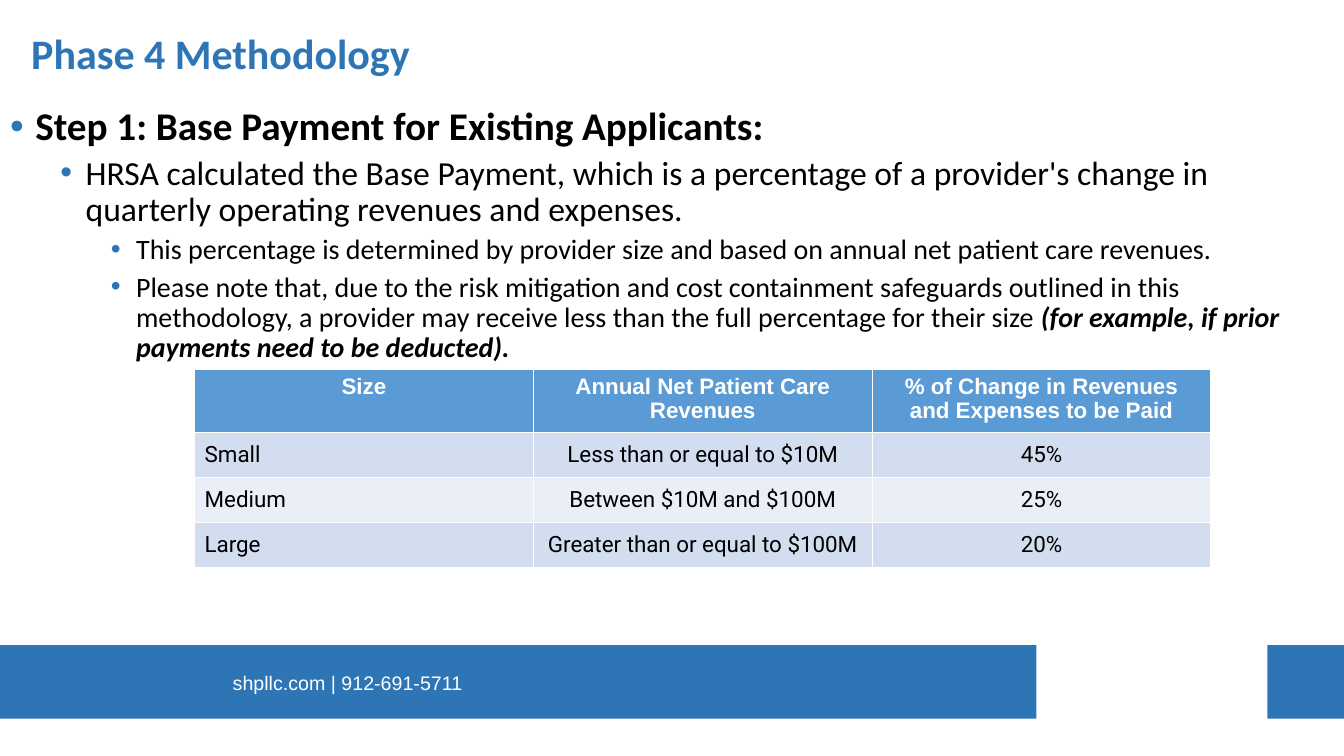
from lxml.etree import SubElement
from pptx import Presentation
from pptx.dml.color import RGBColor
from pptx.enum.shapes import MSO_SHAPE
from pptx.enum.text import MSO_ANCHOR, MSO_AUTO_SIZE, PP_ALIGN
from pptx.oxml.ns import qn
from pptx.util import Inches, Pt

COLORS = {
    "blue": "2E75B6", "white": "FFFFFF", "black": "000000",
    "header": "5B9BD5", "odd row": "D2DEEF", "even row": "EAEFF7",
}
TITLE = "Phase 4 Methodology"
FOOTER = "shpllc.com | 912-691-5711"
# Each bullet: level, plain text, emphasised ending
BULLETS = [
    (0, "Step 1: Base Payment for Existing Applicants:", ""),
    (1, "HRSA calculated the Base Payment, which is a percentage of a provider's change in "
        "quarterly operating revenues and expenses.", ""),
    (2, "This percentage is determined by provider size and based on annual net patient "
        "care revenues.", ""),
    (2, "Please note that, due to the risk mitigation and cost containment safeguards "
        "outlined in this methodology, a provider may receive less than the full "
        "percentage for their size ",
     "(for example, if prior payments need to be deducted)."),
]
LEVEL_SIZES = [28, 24, 20]
PAYMENT_TABLE = [
    ("Size", "Annual Net Patient Care Revenues",
     "% of Change in Revenues and Expenses to be Paid"),
    ("Small", "Less than or equal to $10M", "45%"),
    ("Medium", "Between $10M and $100M", "25%"),
    ("Large", "Greater than or equal to $100M", "20%"),
]
WIDTH, HEIGHT = 13.33, 7.5
COLUMN_WIDTH, HEADER_HEIGHT, ROW_HEIGHT = 3.36, 0.59, 0.44


def color(name):
    return RGBColor.from_string(COLORS[name])


def set_font(font, name, size, color_name, bold=False):
    font.name, font.size, font.bold = name, Pt(size), bold
    font.color.rgb = color(color_name)


def place(shape, left, top, width, height):
    shape.left, shape.top = Inches(left), Inches(top)
    shape.width, shape.height = Inches(width), Inches(height)


def add_block(slide, color_name, *bounds):
    block = slide.shapes.add_shape(MSO_SHAPE.RECTANGLE, *map(Inches, bounds))
    block.shadow.inherit = False
    block.fill.solid()
    block.fill.fore_color.rgb = color(color_name)
    block.line.fill.background()


def add_footer(slide):
    add_block(slide, "blue", 0, 6.4, WIDTH, 0.73)
    add_block(slide, "white", 10.28, 6.07, 2.29, 1.34)
    box = slide.shapes.add_textbox(*map(Inches, (2.21, 6.61, 2.81, 0.34)))
    box.text_frame.word_wrap = True
    para = box.text_frame.paragraphs[0]
    para.text = FOOTER
    set_font(para.font, "Arial", 14, "white")


def fill_title(title):
    place(title, 0.21, 0, 11.55, 1.11)
    frame = title.text_frame
    frame.auto_size = MSO_AUTO_SIZE.NONE
    frame.vertical_anchor = MSO_ANCHOR.MIDDLE
    para = frame.paragraphs[0]
    para.text = TITLE
    para.alignment, para.line_spacing = PP_ALIGN.LEFT, 0.9
    set_font(para.font, "Calibri", 30, "blue", bold=True)


def add_bullet(para, level):
    properties = para._p.get_or_add_pPr()
    properties.set("marL", str(Inches(0.25 + 0.5 * level)))
    properties.set("indent", str(Inches(-0.25)))
    bullet_color = SubElement(properties, qn("a:buClr"))
    SubElement(bullet_color, qn("a:srgbClr"), val=COLORS["blue"])
    SubElement(properties, qn("a:buFont"), typeface="Arial")
    SubElement(properties, qn("a:buChar"), char="•")


def fill_body(body):
    place(body, 0, 1.01, WIDTH, 5.29)
    frame = body.text_frame
    frame.auto_size = MSO_AUTO_SIZE.NONE
    for index, (level, text, emphasis) in enumerate(BULLETS):
        para = frame.add_paragraph() if index else frame.paragraphs[0]
        para.level = level
        add_bullet(para, level)
        para.line_spacing = 0.9
        para.space_before = Pt(5 if index else 0)
        set_font(para.font, "Calibri", LEVEL_SIZES[level], "black", bold=level == 0)
        para.add_run().text = text
        if emphasis:
            span = para.add_run()
            span.text = emphasis
            span.font.bold = span.font.italic = True


def add_payment_table(slide):
    row_count, column_count = len(PAYMENT_TABLE), len(PAYMENT_TABLE[0])
    height = HEADER_HEIGHT + ROW_HEIGHT * (row_count - 1)
    bounds = map(Inches, (1.93, 3.66, COLUMN_WIDTH * column_count, height))
    table = slide.shapes.add_table(row_count, column_count, *bounds).table
    for row, values in enumerate(PAYMENT_TABLE):
        table.rows[row].height = Inches(ROW_HEIGHT if row else HEADER_HEIGHT)
        fill = ("odd row" if row % 2 else "even row") if row else "header"
        for column, value in enumerate(values):
            cell = table.cell(row, column)
            cell.fill.solid()
            cell.fill.fore_color.rgb = color(fill)
            para = cell.text_frame.paragraphs[0]
            para.text = value
            para.alignment = PP_ALIGN.LEFT if row and column == 0 else PP_ALIGN.CENTER
            if row:
                cell.vertical_anchor = MSO_ANCHOR.MIDDLE
                cell.margin_top = cell.margin_bottom = Inches(0.09)
                set_font(para.font, "Roboto", 16, "black")
            else:
                set_font(para.font, "Arial", 16, "white", bold=True)


def main():
    deck = Presentation()
    deck.slide_width, deck.slide_height = Inches(WIDTH), Inches(HEIGHT)
    slide = deck.slides.add_slide(deck.slide_layouts[1])
    add_footer(slide)
    fill_title(slide.shapes.title)
    fill_body(slide.placeholders[1])
    add_payment_table(slide)
    deck.save("out.pptx")


if __name__ == "__main__":
    main()
